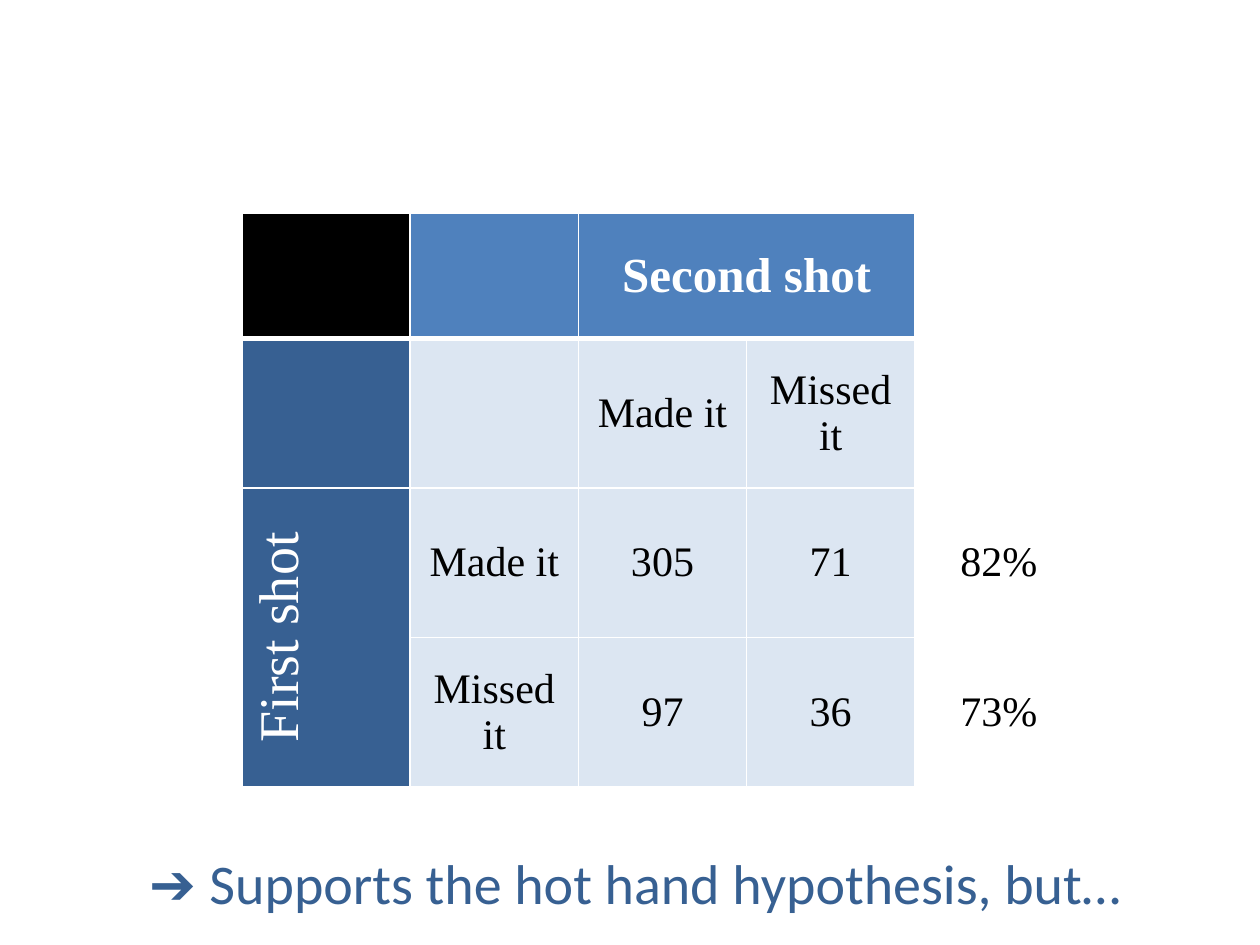
from lxml import etree
from pptx import Presentation
from pptx.dml.color import RGBColor
from pptx.enum.text import MSO_ANCHOR, PP_ALIGN
from pptx.oxml.ns import qn
from pptx.util import Cm, Pt

WHITE = RGBColor(0xFF, 0xFF, 0xFF)
BLACK = RGBColor(0x00, 0x00, 0x00)
BLUE = RGBColor(0x4F, 0x81, 0xBD)
DARK_BLUE = RGBColor(0x37, 0x60, 0x92)
PALE_BLUE = RGBColor(0xDC, 0xE6, 0xF2)


def write(text_frame, text, size, color, font="Times New Roman", bold=False):
    text_frame.text = text
    paragraph = text_frame.paragraphs[0]
    paragraph.alignment = PP_ALIGN.CENTER
    for run in paragraph.runs:
        run.font.size = Pt(size)
        run.font.name = font
        run.font.bold = bold
        run.font.color.rgb = color


def add_border(cell, side, width):
    line = etree.SubElement(cell._tc.get_or_add_tcPr(), qn(f"a:ln{side}"), w=str(Pt(width)))
    fill = etree.SubElement(line, qn("a:solidFill"))
    etree.SubElement(fill, qn("a:srgbClr"), val=str(WHITE))


prs = Presentation()
prs.slide_width, prs.slide_height = Cm(25.4), Cm(19.05)
slide = prs.slides.add_slide(prs.slide_layouts[6])

SHOTS = [
    ["", "", "Second shot", "", ""],
    ["", "", "Made it", "Missed it", ""],
    ["First shot", "Made it", "305", "71", "82%"],
    ["", "Missed it", "97", "36", "73%"],
]
HEADER_FILLS = [BLACK, BLUE, BLUE, BLUE, WHITE]
BODY_FILLS = [DARK_BLUE, PALE_BLUE, PALE_BLUE, PALE_BLUE, WHITE]

shot_table = slide.shapes.add_table(4, 5, Cm(4.88), Cm(4.29), Cm(16.93), Cm(11.58)).table
for column in shot_table.columns:
    column.width = Cm(3.39)
for row, height in zip(shot_table.rows, [2.54, 3.01, 3.01, 3.01]):
    row.height = Cm(height)

for r, texts in enumerate(SHOTS):
    for c, text in enumerate(texts):
        cell = shot_table.cell(r, c)
        # A thick rule separates the header from the rows below it
        for side, header_row in (("L", None), ("R", None), ("T", 1), ("B", 0)):
            add_border(cell, side, 3 if r == header_row else 1)
        cell.fill.solid()
        cell.fill.fore_color.rgb = (BODY_FILLS if r else HEADER_FILLS)[c]
        cell.vertical_anchor = MSO_ANCHOR.MIDDLE
        if r == 0:
            write(cell.text_frame, text, 28, WHITE, bold=True)
        elif c == 0:
            write(cell.text_frame, text, 32, WHITE)
        else:
            write(cell.text_frame, text, 24, BLACK)

shot_table.cell(0, 2).merge(shot_table.cell(0, 3))
first_shot = shot_table.cell(2, 0)
first_shot.merge(shot_table.cell(3, 0))
first_shot._tc.get_or_add_tcPr().set("vert", "vert270")

conclusion = slide.shapes.add_textbox(Cm(1.07), Cm(16.99), Cm(23.5), Cm(1.63)).text_frame
conclusion.word_wrap = True
write(conclusion, "➔ Supports the hot hand hypothesis, but…", 32, DARK_BLUE, font="Calibri")

prs.save("out.pptx")
